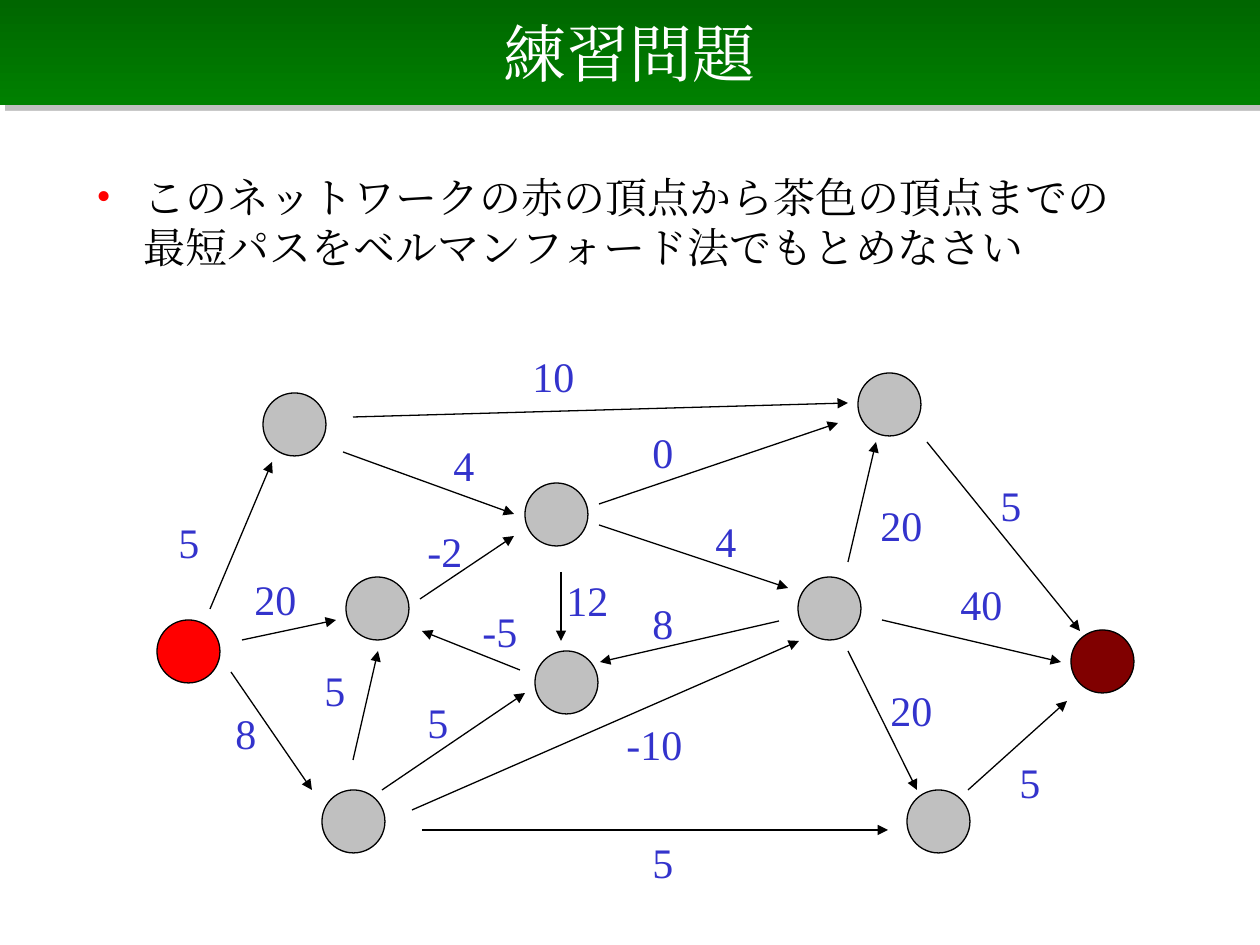
from dataclasses import dataclass

from lxml.etree import SubElement
from pptx import Presentation
from pptx.dml.color import RGBColor
from pptx.enum.shapes import MSO_CONNECTOR, MSO_SHAPE
from pptx.enum.text import MSO_ANCHOR, PP_ALIGN
from pptx.oxml.ns import qn
from pptx.util import Emu, Pt

PX_PER_INCH = 126
NODE_SIZE = 63
LABEL_HEIGHT = 63


@dataclass(frozen=True)
class Theme:
    """Colours, font and type sizes of the slide."""
    font: str = "Times New Roman"
    title_size: int = 36
    text_size: int = 24
    line_width: float = 0.75
    title: str = "FFFFFF"
    text: str = "000000"
    bullet: str = "FF0000"
    weight: str = "3333CC"
    line: str = "000000"
    node: str = "C0C0C0"
    source: str = "FF0000"
    target: str = "800000"
    band_top: str = "006600"
    band_bottom: str = "008000"
    shadow: str = "808080"


THEME = Theme()

NODES = [
    (157, 620, THEME.source), (1071, 630, THEME.target),
    (263, 393, THEME.node), (346, 577, THEME.node),
    (322, 790, THEME.node), (525, 483, THEME.node),
    (535, 651, THEME.node), (798, 577, THEME.node),
    (858, 373, THEME.node), (907, 790, THEME.node),
]

EDGES = [
    ("5", (210, 609), (272, 462), (166, 510)),
    ("20", (242, 640), (336, 620), (242, 567)),
    ("8", (231, 672), (312, 790), (223, 701)),
    ("10", (353, 417), (848, 403), (520, 344)),
    ("4", (343, 452), (514, 514), (441, 433)),
    ("-2", (420, 599), (514, 536), (415, 519)),
    ("-5", (520, 670), (422, 631), (470, 599)),
    ("5", (353, 760), (378, 651), (312, 658)),
    ("5", (382, 790), (525, 693), (415, 690)),
    ("-10", (412, 810), (799, 641), (614, 712)),
    ("5", (422, 830), (888, 830), (640, 830)),
    ("0", (599, 504), (838, 423), (640, 420)),
    ("4", (599, 525), (788, 588), (703, 509)),
    ("12", (561, 572), (561, 641), (554, 568)),
    ("8", (779, 621), (600, 662), (640, 591)),
    ("20", (848, 562), (876, 442), (868, 493)),
    ("40", (882, 620), (1061, 662), (948, 572)),
    ("20", (848, 651), (917, 790), (878, 678)),
    ("5", (927, 442), (1080, 631), (988, 473)),
    ("5", (968, 790), (1067, 701), (1007, 750)),
]


def px(*lengths):
    """Turn pixel lengths into EMU."""
    return [Emu(round(length * 914400 / PX_PER_INCH)) for length in lengths]


def rgb(value):
    """Turn a hex string into a colour."""
    return RGBColor.from_string(value)


def write(shape, text, size, color):
    """Put one formatted paragraph into a shape and return it."""
    shape.text_frame.text = text
    para = shape.text_frame.paragraphs[0]
    span = para.runs[0]
    span.font.size = Pt(size)
    span.font.name = THEME.font
    span.font.color.rgb = rgb(color)
    latin = span.font._element.find(qn("a:latin"))
    east_asian = latin.makeelement(qn("a:ea"), {"typeface": THEME.font})
    latin.addnext(east_asian)
    return para


def add_title(slide, text):
    """Add the title band with its gradient and shadow."""
    band = slide.shapes.add_shape(MSO_SHAPE.RECTANGLE, *px(0, 0, 1260, 105))
    band.fill.gradient()
    band.fill.gradient_angle = 270
    for stop, color, position in zip(
        band.fill.gradient_stops, (THEME.band_top, THEME.band_bottom), (0, 1)
    ):
        stop.color.rgb = rgb(color)
        stop.position = position
    band.line.fill.background()
    band.shadow.inherit = False
    effects = band._element.spPr.find(qn("a:effectLst"))
    shadow = SubElement(effects, qn("a:outerShdw"), dist="53340", dir="2700000",
                        algn="ctr", rotWithShape="0")
    color = SubElement(shadow, qn("a:srgbClr"), val=THEME.shadow)
    SubElement(color, qn("a:alpha"), val="50000")
    band.text_frame.vertical_anchor = MSO_ANCHOR.MIDDLE
    para = write(band, text, THEME.title_size, THEME.title)
    para.alignment = PP_ALIGN.CENTER


def add_bullet(slide, text):
    """Add the task as a bulleted paragraph."""
    box = slide.shapes.add_textbox(*px(84, 165, 1071, 184))
    box.text_frame.word_wrap = True
    para = write(box, text, THEME.text_size, THEME.text)
    para.space_before = Pt(5)
    properties = para._p.get_or_add_pPr()
    properties.set("marL", "342900")
    properties.set("indent", "-342900")
    color = SubElement(properties, qn("a:buClr"))
    SubElement(color, qn("a:srgbClr"), val=THEME.bullet)
    SubElement(properties, qn("a:buFont"), typeface=THEME.font)
    SubElement(properties, qn("a:buChar"), char="•")


def add_node(slide, left, top, color):
    """Add one vertex of the network."""
    node = slide.shapes.add_shape(
        MSO_SHAPE.OVAL, *px(left, top, NODE_SIZE, NODE_SIZE))
    node.shadow.inherit = False
    node.fill.solid()
    node.fill.fore_color.rgb = rgb(color)
    node.line.color.rgb = rgb(THEME.line)
    node.line.width = Pt(THEME.line_width)


def add_arrow(slide, start, end):
    """Add one directed edge of the network."""
    arrow = slide.shapes.add_connector(
        MSO_CONNECTOR.STRAIGHT, *px(*start, *end))
    arrow.line.color.rgb = rgb(THEME.line)
    arrow.line.width = Pt(THEME.line_width)
    SubElement(arrow.line._get_or_add_ln(), qn("a:tailEnd"), type="triangle")
    SubElement(arrow._element.spPr, qn("a:effectLst"))


def add_weight(slide, text, left, top):
    """Add the weight of an edge in a box as wide as its text."""
    width = 26 + sum(14 if sign == "-" else 21 for sign in text)
    box = slide.shapes.add_textbox(*px(left, top, width, LABEL_HEIGHT))
    box.text_frame.word_wrap = False
    write(box, text, THEME.text_size, THEME.weight)


def main():
    """Build the slide and save the deck."""
    deck = Presentation()
    deck.slide_width, deck.slide_height = px(1260, 945)
    slide = deck.slides.add_slide(deck.slide_layouts[6])
    add_title(slide, "練習問題")
    add_bullet(slide, "このネットワークの赤の頂点から茶色の頂点までの"
                      "最短パスをベルマンフォード法でもとめなさい")
    for node in NODES:
        add_node(slide, *node)
    for weight, start, end, corner in EDGES:
        add_arrow(slide, start, end)
        add_weight(slide, weight, *corner)
    deck.save("out.pptx")


if __name__ == "__main__":
    main()
